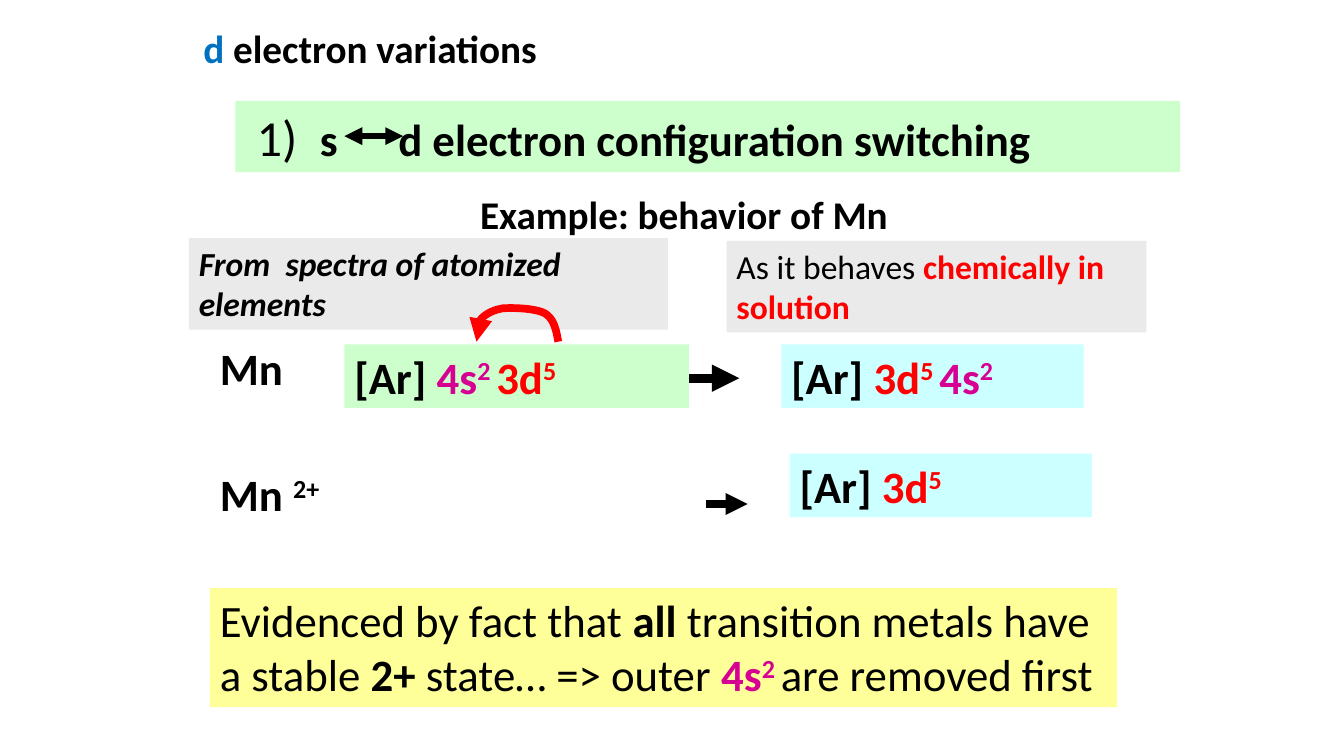
from lxml import etree
from pptx import Presentation
from pptx import util as u
from pptx.dml.color import RGBColor
from pptx.enum import shapes, text
from pptx.oxml import ns

FONT = "Calibri"
BLACK, RED, MAGENTA, BLUE = "000000", "FF0000", "D60093", "0070C0"
GREEN_FILL, CYAN_FILL, GREY_FILL, YELLOW_FILL = "CCFFCC", "CCFFFF", "EAEAEA", "FFFF99"
ARGON = ("[Ar] ", BLACK, "b")


def color(hex_string):
    """Return the colour for a hex string."""
    return RGBColor.from_string(hex_string)


def orbital(name, count, hex_string):
    """Return the runs of an orbital with its superscript electron count."""
    return [(name, hex_string, "b"), (count, hex_string, "b^")]


def write_runs(paragraph, runs, size):
    """Add runs of (text, colour, style[, size]); style letters are b, i and ^."""
    paragraph.alignment = text.PP_ALIGN.LEFT
    for content, hex_string, style, *own_size in runs:
        run = paragraph.add_run()
        run.text = content
        font = run.font
        font.name = FONT
        font.size = u.Pt(own_size[0] if own_size else size)
        font.bold = "b" in style
        font.italic = "i" in style
        font.color.rgb = color(hex_string)
        if "^" in style:
            run._r.get_or_add_rPr().set("baseline", "30000")


def add_tab_stops(paragraph, positions):
    """Set left tab stops, in centimetres from the text edge."""
    properties = paragraph._p.get_or_add_pPr()
    tab_list = etree.SubElement(properties, ns.qn("a:tabLst"))
    for position in positions:
        etree.SubElement(tab_list, ns.qn("a:tab"), pos=str(u.Cm(position)), algn="l")


def add_label(slide, box, runs, size, fill=None, wrap=True):
    """Add a text box, or a filled rectangle if a fill is given."""
    place = [u.Cm(length) for length in box]
    if fill:
        shape = slide.shapes.add_shape(shapes.MSO_SHAPE.RECTANGLE, *place)
        shape.shadow.inherit = False
        shape.fill.solid()
        shape.fill.fore_color.rgb = color(fill)
        shape.line.fill.background()
    else:
        shape = slide.shapes.add_textbox(*place)
    frame = shape.text_frame
    frame.word_wrap = wrap
    frame.auto_size = text.MSO_AUTO_SIZE.SHAPE_TO_FIT_TEXT
    frame.vertical_anchor = text.MSO_ANCHOR.TOP
    write_runs(frame.paragraphs[0], runs, size)
    return shape


def style_line(shape, hex_string, width, ends):
    """Colour a line and put triangle arrowheads at the named ends."""
    shape.line.color.rgb = color(hex_string)
    shape.line.width = u.Pt(width)
    line = shape.line._get_or_add_ln()
    for end in ends:
        etree.SubElement(line, ns.qn(f"a:{end}"), type="triangle")


def add_arrow(slide, left, right, y, width, ends=("tailEnd",)):
    """Add a horizontal black arrow."""
    arrow = slide.shapes.add_connector(
        shapes.MSO_CONNECTOR.STRAIGHT, u.Cm(left), u.Cm(y), u.Cm(right), u.Cm(y))
    style_line(arrow, BLACK, width, ends)
    etree.SubElement(arrow._element.spPr, ns.qn("a:effectLst"))


def bezier(points, t):
    """Return the point at t on a cubic curve."""
    weights = ((1 - t) ** 3, 3 * t * (1 - t) ** 2, 3 * t * t * (1 - t), t ** 3)
    return tuple(sum(w * p[axis] for w, p in zip(weights, points)) for axis in (0, 1))


def add_curved_arrow(slide, points, steps=10):
    """Add the red arrow along joined cubic curves."""
    curve = [bezier(points[first:first + 4], step / steps)
             for first in range(0, len(points) - 1, 3)
             for step in range(1, steps + 1)]
    vertices = [(u.Cm(x), u.Cm(y)) for x, y in curve]
    builder = slide.shapes.build_freeform(u.Cm(points[0][0]), u.Cm(points[0][1]))
    builder.add_line_segments(vertices, close=False)
    arrow = builder.convert_to_shape()
    arrow.shadow.inherit = False
    arrow.fill.background()
    style_line(arrow, RED, 5.5, ["tailEnd"])


def add_title(slide, box, runs, size):
    """Place and write the title placeholder."""
    title = slide.shapes.title
    title.left, title.top, title.width, title.height = [u.Cm(length) for length in box]
    frame = title.text_frame
    frame.auto_size = text.MSO_AUTO_SIZE.NONE
    frame.vertical_anchor = text.MSO_ANCHOR.MIDDLE
    frame.paragraphs[0].line_spacing = 0.9
    write_runs(frame.paragraphs[0], runs, size)


def main():
    """Build the slide and save it."""
    presentation = Presentation()
    presentation.slide_width, presentation.slide_height = u.Cm(33.87), u.Cm(19.05)
    slide = presentation.slides.add_slide(presentation.slide_layouts[5])

    add_title(slide, (4.87, 0, 23.28, 2.54),
              [("d ", BLUE, "b"), ("electron variations", BLACK, "b")], 28)
    add_label(slide, (5.29, 8.47, 3.18, 1.6), [("Mn", BLACK, "b")], 32)
    heading = add_label(
        slide, (5.93, 2.54, 23.81, 1.8),
        [(" 1)\t", BLACK, "", 36), ("s\td electron configuration switching", BLACK, "b")],
        32, GREEN_FILL)
    add_tab_stops(heading.text_frame.paragraphs[0], (1.88, 3.86))

    add_label(slide, (8.68, 8.68, 8.68, 1.6),
              [ARGON, *orbital("4s", "2 ", MAGENTA), *orbital("3d", "5", RED)], 32, GREEN_FILL)
    add_arrow(slide, 17.36, 18.63, 9.53, 6.5)
    add_label(slide, (19.69, 8.68, 7.62, 1.6),
              [ARGON, *orbital("3d", "5 ", RED), *orbital("4s", "2", MAGENTA)], 32, CYAN_FILL)
    add_label(slide, (19.9, 11.43, 7.62, 1.6),
              [ARGON, *orbital("3d", "5", RED)], 32, CYAN_FILL)

    add_label(slide, (4.76, 6, 12.07, 2.31),
              [("From  spectra of atomized elements", BLACK, "bi")], 24, GREY_FILL)
    add_label(slide, (18.31, 6.07, 10.58, 2.31),
              [("As it behaves ", BLACK, ""), ("chemically in solution", RED, "b")],
              24, GREY_FILL)
    add_label(slide, (5.29, 11.64, 3.15, 1.62),
              [("Mn ", BLACK, "b"), ("2+", BLACK, "b^")], 32, wrap=False)
    add_arrow(slide, 17.78, 18.84, 12.7, 5.25)
    add_label(slide, (5.29, 14.82, 22.86, 3),
              [("Evidenced by fact that ", BLACK, ""), ("all ", BLACK, "b"),
               ("transition metals have a stable ", BLACK, ""), ("2+ ", BLACK, "b"),
               ("state… => outer ", BLACK, ""), *orbital("4s", "2 ", MAGENTA),
               ("are removed first", BLACK, "")], 32, YELLOW_FILL)
    add_arrow(slide, 8.68, 10.16, 3.43, 4.25, ("headEnd", "tailEnd"))
    add_label(slide, (11.85, 4.66, 12.7, 1.45),
              [("Example: behavior of Mn", BLACK, "b")], 28)
    add_curved_arrow(slide, [
        (14.07, 8.61), (14.02, 8.33), (13.97, 8.05), (13.74, 7.9),
        (13.51, 7.77), (12.95, 7.75), (12.67, 7.77),
        (12.4, 7.82), (12.22, 7.92), (12.09, 8.08),
        (11.99, 8.2), (12.01, 8.61), (12.01, 8.61)])

    presentation.save("out.pptx")


if __name__ == "__main__":
    main()
